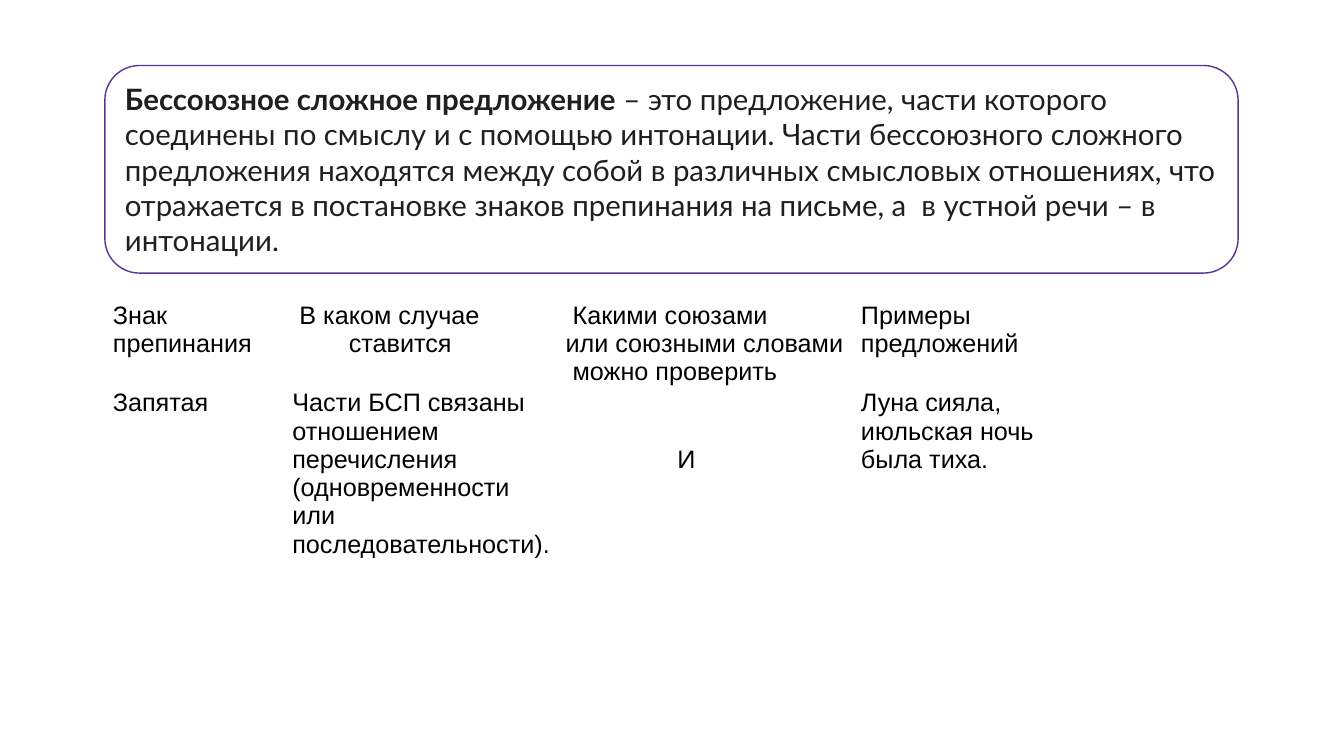
from dataclasses import dataclass

from pptx import Presentation, util as u
from pptx.dml.color import RGBColor
from pptx.enum import shapes, text

PX = 9144  # 100 px to the inch
BLACK, DARK, VIOLET, WHITE = "000000", "1F1F1F", "593593", "FFFFFF"


@dataclass
class Line:
    text: str
    indent: int = 0


@dataclass
class Cell:
    lines: list[Line]
    top: int = 0


COLS = [178, 271, 293, 201]
ROW = 87
ROWS = [
    [
        Cell([Line("Знак"), Line("препинания")]),
        Cell([Line("В каком случае", 7), Line("ставится", 56)]),
        Cell([Line("Какими союзами", 7), Line("или союзными словами"),
              Line("можно проверить", 7)]),
        Cell([Line("Примеры предложений")]),
    ],
    [
        Cell([Line("Запятая")]),
        Cell([Line("Части БСП связаны отношением"), Line("перечисления"),
              Line("(одновременности или последовательности).")]),
        Cell([Line("И", 111)], top=56),
        Cell([Line("Луна сияла, июльская ночь была тиха.")]),
    ],
]
TERM = "Бессоюзное сложное предложение"
RULE = (" – это предложение, части которого соединены по смыслу и с помощью "
        "интонации. Части бессоюзного сложного предложения находятся между "
        "собой в различных смысловых отношениях, что отражается в постановке "
        "знаков препинания на письме, а  в устной речи – в интонации.")


def px(size: int) -> u.Emu:
    return u.Emu(size * PX)


def rgb(code: str) -> RGBColor:
    return RGBColor.from_string(code)


def apply(item, values: dict) -> None:
    for name, value in values.items():
        setattr(item, name, value)


def add_run(para, words: str, color: str, **style) -> None:
    run = para.add_run()
    run.text = words
    apply(run.font, style)
    run.font.color.rgb = rgb(color)


def fill_cell(box, cell: Cell) -> None:
    box.fill.background()
    apply(box, {"margin_left": px(7), "margin_right": px(7),
                "margin_top": px(cell.top), "margin_bottom": 0})
    frame = box.text_frame
    for i, line in enumerate(cell.lines):
        para = frame.add_paragraph() if i else frame.paragraphs[0]
        para._p.get_or_add_pPr().set("marL", str(px(line.indent)))
        add_run(para, line.text, BLACK, name="Arial", size=u.Pt(18), bold=False)


def draw_table(slide) -> None:
    table = slide.shapes.add_table(
        len(ROWS), len(COLS), px(105), px(299),
        px(sum(COLS)), px(ROW * len(ROWS))).table
    apply(table, {"first_row": False, "horz_banding": False})
    for col, width in zip(table.columns, COLS):
        col.width = px(width)
    for r, row in enumerate(ROWS):
        for c, cell in enumerate(row):
            fill_cell(table.cell(r, c), cell)


def draw_rule(slide) -> None:
    box = slide.shapes.add_shape(
        shapes.MSO_SHAPE.ROUNDED_RECTANGLE, px(104), px(65), px(1124), px(206))
    box.shadow.inherit = False
    box.fill.solid()
    box.fill.fore_color.rgb = rgb(WHITE)
    box.line.color.rgb = rgb(VIOLET)
    box.line.width = u.Pt(1)
    apply(box.text_frame, {"word_wrap": True,
                           "vertical_anchor": text.MSO_ANCHOR.MIDDLE})
    para = box.text_frame.paragraphs[0]
    para.alignment = text.PP_ALIGN.LEFT
    for words, bold in ((TERM, True), (RULE, False)):
        add_run(para, words, DARK, name="Lato", size=u.Pt(21), bold=bold)


def main() -> None:
    deck = Presentation()
    apply(deck, {"slide_width": px(1333), "slide_height": px(750)})
    slide = deck.slides.add_slide(deck.slide_layouts[6])
    draw_table(slide)
    draw_rule(slide)
    deck.save("out.pptx")


if __name__ == "__main__":
    main()
